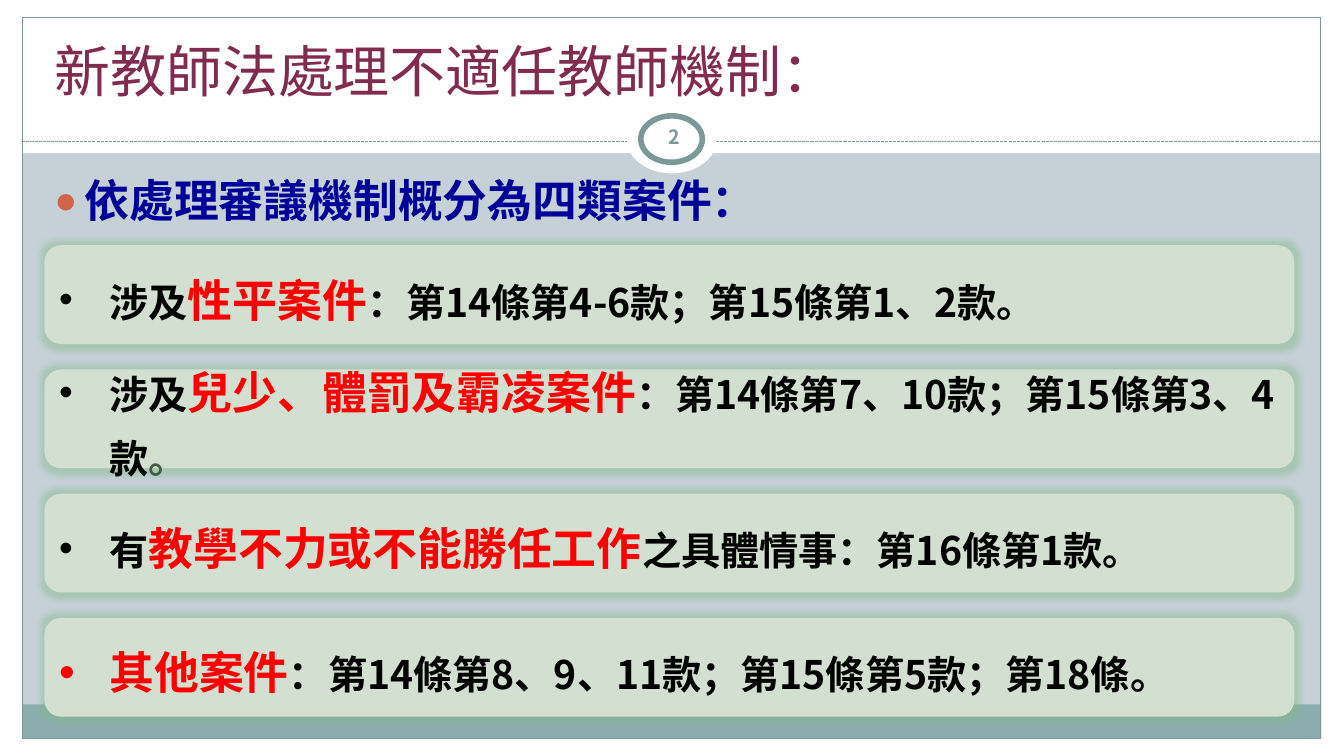
"""Build the slide on the four kinds of teacher cases."""
from dataclasses import dataclass
from typing import Optional

from lxml.etree import SubElement as Sub
from pptx import Presentation
from pptx.dml.color import RGBColor as Rgb
from pptx.enum.dml import MSO_LINE as Dash
from pptx.enum.shapes import MSO_CONNECTOR as Conn, MSO_SHAPE as Kind
from pptx.enum.text import MSO_ANCHOR as Anchor, PP_ALIGN as Align
from pptx.oxml.ns import qn
from pptx.util import Cm, Pt

FONT = "Noto Sans CJK SC"
HUES = {
    "back": "C5D1D7", "white": "FFFFFF", "band": "8CADAE", "line": "7C999A",
    "title": "812B50", "dot": "D16349", "navy": "000099", "card": "D2DFD1",
    "glow": "85B98B", "black": "000000", "red": "FF0000", "moss": "435E40",
}


@dataclass(frozen=True)
class Box:
    left: float
    top: float
    wide: float
    high: float

    def cm(self) -> tuple:
        return Cm(self.left), Cm(self.top), Cm(self.wide), Cm(self.high)


@dataclass(frozen=True)
class Part:
    box: Box
    kind: Kind = Kind.RECTANGLE
    fill: Optional[str] = "white"
    line: float = 0


@dataclass(frozen=True)
class Run:
    text: str
    size: float = 28
    hue: str = "black"
    bold: bool = True


def key(text: str) -> Run:
    return Run(text, 32, "red")


PARTS = [
    Part(Box(0, 18.62, 33.87, 0.43)),
    Part(Box(0, 0, 33.87, 3.86)),
    Part(Box(0, 0, 0.56, 19.05)),
    Part(Box(33.3, 0, 0.57, 19.05)),
    Part(Box(0.56, 17.75, 32.72, 0.87), fill="band"),
    Part(Box(0.56, 0.43, 32.72, 18.19), fill=None, line=0.75),
]
RINGS = [
    Part(Box(15.8, 2.67, 2.26, 1.7), Kind.OVAL),
    Part(Box(16.15, 2.92, 1.55, 1.17), Kind.OVAL, line=4),
]
CARDS = [
    [Run("涉及"), key("性平案件"), Run("：第14條第4-6款；第15條第1、2款。")],
    [Run("涉及"), key("兒少、體罰及霸凌案件"),
     Run("：第14條第7、10款；第15條第3、4款"), Run("。", hue="moss")],
    [Run("有"), key("教學不力或不能勝任工作"), Run("之具體情事：第16條第1款。")],
    [key("其他案件"), Run("：第14條第8、9、11款；第15條第5款；第18條。")],
]


def rgb(hue: str) -> Rgb:
    return Rgb.from_string(HUES[hue])


def draw(slide, part: Part):
    shape = slide.shapes.add_shape(part.kind, *part.box.cm())
    shape.shadow.inherit = False
    if part.fill:
        shape.fill.solid()
        shape.fill.fore_color.rgb = rgb(part.fill)
    else:
        shape.fill.background()
    if part.line:
        shape.line.color.rgb = rgb("line")
        shape.line.width = Pt(part.line)
    else:
        shape.line.fill.background()
    return shape


def rule(slide) -> None:
    line = slide.shapes.add_connector(
        Conn.STRAIGHT, Cm(0.56), Cm(3.56), Cm(33.28), Cm(3.56))
    line.line.color.rgb = rgb("line")
    line.line.width = Pt(0.75)
    line.line.dash_style = Dash.SQUARE_DOT
    props = line.line._get_or_add_ln().getparent()
    Sub(props, qn("a:effectLst"))


def write(shape, runs: list[Run], anchor: Anchor, align=Align.LEFT):
    frame = shape.text_frame
    frame.word_wrap = True
    frame.vertical_anchor = anchor
    para = frame.paragraphs[0]
    para.alignment = align
    for item in runs:
        run = para.add_run()
        run.text = item.text
        font = run.font
        font.size = Pt(item.size)
        font.bold = item.bold
        font.color.rgb = rgb(item.hue)
        font.name = FONT
        Sub(font._element, qn("a:ea"), typeface=FONT)
    return para


def label(slide, box: Box, run: Run, anchor: Anchor, align=Align.LEFT):
    shape = slide.shapes.add_textbox(*box.cm())
    return shape, write(shape, [run], anchor, align)


def mark(para, char: str, step: float, hue: str = "", size: int = 100) -> None:
    props = para._p.get_or_add_pPr()
    props.set("marL", str(Cm(step)))
    props.set("indent", str(-Cm(step)))
    if hue:
        Sub(Sub(props, qn("a:buClr")), qn("a:srgbClr"), val=HUES[hue])
    Sub(props, qn("a:buSzPct"), val=str(size * 1000))
    Sub(props, qn("a:buFont"), typeface="Arial")
    Sub(props, qn("a:buChar"), char=char)


def glow(shape) -> None:
    props = shape._element.spPr.find(qn("a:effectLst"))
    halo = Sub(props, qn("a:glow"), rad=str(Cm(0.28)))
    tint = Sub(halo, qn("a:srgbClr"), val=HUES["glow"])
    Sub(tint, qn("a:alpha"), val="45000")


def card(slide, row: int, runs: list[Run]) -> None:
    box = Box(1.12, 6.18 + 3.13 * row, 31.5, 2.49)
    shape = draw(slide, Part(box, Kind.ROUNDED_RECTANGLE, "card"))
    glow(shape)
    para = write(shape, runs, Anchor.MIDDLE)
    para.line_spacing = Pt(45)
    mark(para, "•", 1.27)


def main() -> None:
    deck = Presentation()
    deck.slide_width, deck.slide_height = Cm(33.87), Cm(19.05)
    slide = deck.slides.add_slide(deck.slide_layouts[6])
    slide.background.fill.solid()
    slide.background.fill.fore_color.rgb = rgb("back")
    for part in PARTS:
        draw(slide, part)
    rule(slide)
    for ring in RINGS:
        draw(slide, ring)
    label(slide, Box(1.12, 0.64, 31.6, 2.11),
          Run("新教師法處理不適任教師機制：", 40, "title", False), Anchor.BOTTOM)
    page, _ = label(slide, Box(16.15, 2.84, 1.7, 1.22),
                    Run("2", 14, "line"), Anchor.MIDDLE, Align.CENTER)
    page.text_frame.margin_left = page.text_frame.margin_right = 0
    _, lead = label(slide, Box(1.12, 4.24, 31.5, 12.7),
                    Run("依處理審議機制概分為四類案件：", 32, "navy"), Anchor.TOP)
    lead.space_before = Pt(6.4)
    mark(lead, "●", 0.76, "dot", 85)
    for row, runs in enumerate(CARDS):
        card(slide, row, runs)
    deck.save("out.pptx")


if __name__ == "__main__":
    main()
